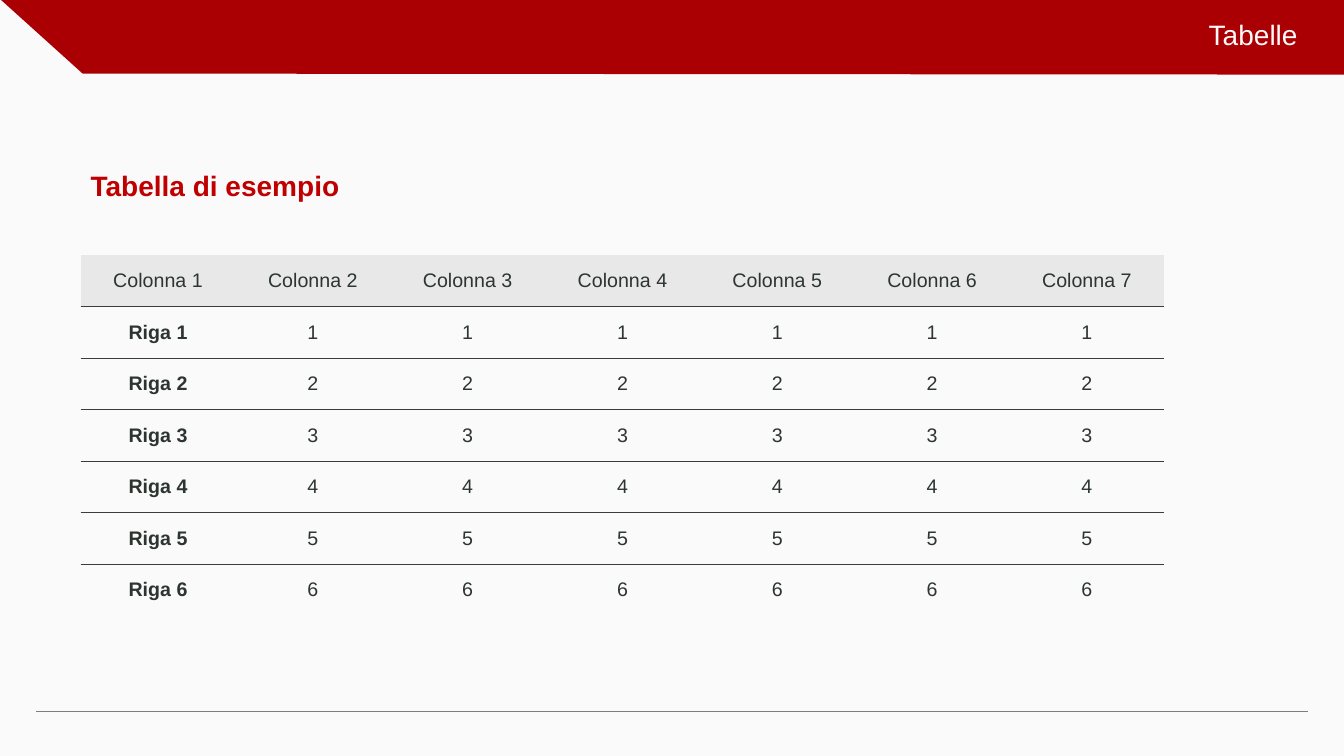
import pptx
import pptx.dml.color
import pptx.enum.shapes
import pptx.enum.text
import pptx.oxml
import pptx.oxml.ns
import pptx.oxml.xmlchemy
import pptx.util

Inches = pptx.util.Inches
RGBColor = pptx.dml.color.RGBColor
PP_ALIGN = pptx.enum.text.PP_ALIGN
MIDDLE = pptx.enum.text.MSO_ANCHOR.MIDDLE

PAPER = RGBColor(0xFA, 0xFA, 0xFA)
BANNER_RED = RGBColor(0xAA, 0x00, 0x04)
HEADING_RED = RGBColor(0xC0, 0x00, 0x00)
INK = RGBColor(0x2D, 0x35, 0x31)
HEADER_GREY = RGBColor(0xE8, 0xE8, 0xE8)
RULE_DARK = RGBColor(0x39, 0x3D, 0x3F)
FOOTER_GREY = RGBColor(0x7D, 0x7D, 0x7D)
PLAIN_TABLE_STYLE = "{2D5ABB26-0587-4C30-8999-92F81FD0307C}"


def format_text(text_frame, size, color, align, bold=False, spacing=None):
    """Format the only paragraph of a text frame."""
    paragraph = text_frame.paragraphs[0]
    paragraph.alignment = align
    paragraph.line_spacing = spacing
    font = paragraph.runs[0].font
    font.name = "Arial"
    font.size = pptx.util.Pt(size)
    font.bold = bold
    font.color.rgb = color


def add_banner(slide, left, top, width, height):
    """Draw the red band with its slanted left end and the slide title."""
    builder = slide.shapes.build_freeform(Inches(left), Inches(top))
    builder.add_line_segments([
        (Inches(left + width), Inches(top)),
        (Inches(left + width), Inches(top + height)),
        (Inches(left + 0.82), Inches(top + height - 0.01)),
    ])
    band = builder.convert_to_shape()
    band.shadow.inherit = False
    band.fill.solid()
    band.fill.fore_color.rgb = BANNER_RED
    band.line.fill.background()

    title = slide.shapes.title
    title.left, title.top = Inches(left + 5.12), Inches(top + 0.01)
    title.width, title.height = Inches(7.85), Inches(0.73)
    title.text_frame.text = "Tabelle"
    title.text_frame.vertical_anchor = MIDDLE
    format_text(title.text_frame, 20, PAPER, PP_ALIGN.RIGHT, spacing=0.9)
    band.element.addnext(title.element)


def add_footer_rule(slide, left, top, width):
    """Draw the thin line at the foot of the slide."""
    rule = slide.shapes.add_connector(
        pptx.enum.shapes.MSO_CONNECTOR.STRAIGHT,
        Inches(left), Inches(top), Inches(left + width), Inches(top))
    rule.line.color.rgb = FOOTER_GREY
    rule.line.width = pptx.util.Pt(0.75)
    rule.element.spPr.append(pptx.oxml.xmlchemy.OxmlElement("a:effectLst"))


def add_heading(slide, left, top, width, height):
    """Place the heading above the table."""
    heading = slide.shapes.add_textbox(
        Inches(left), Inches(top), Inches(width), Inches(height)).text_frame
    heading.word_wrap = True
    heading.text = "Tabella di esempio"
    format_text(heading, 20, HEADING_RED, PP_ALIGN.LEFT, bold=True, spacing=1.2)


def add_bottom_border(cell):
    """Give a table cell a thin dark lower edge."""
    border = pptx.oxml.parse_xml(
        f'<a:lnB {pptx.oxml.ns.nsdecls("a")} w="6350"><a:solidFill>'
        f'<a:srgbClr val="{RULE_DARK}"/></a:solidFill></a:lnB>')
    cell._tc.get_or_add_tcPr().insert(0, border)


def add_example_table(slide, left, top, width, height):
    """Build the numbered table with a grey header and ruled rows."""
    header = [f"Colonna {number}" for number in range(1, 8)]
    body = [[f"Riga {number}"] + [str(number)] * 6 for number in range(1, 7)]
    entries = [header] + body
    table = slide.shapes.add_table(
        len(entries), len(header),
        Inches(left), Inches(top), Inches(width), Inches(height)).table
    table.horz_banding = False
    table._tbl.tblPr.find(pptx.oxml.ns.qn("a:tableStyleId")).text = PLAIN_TABLE_STYLE
    for row, texts in enumerate(entries):
        for column, text in enumerate(texts):
            cell = table.cell(row, column)
            cell.text_frame.text = text
            cell.vertical_anchor = MIDDLE
            format_text(cell.text_frame, 14, INK, PP_ALIGN.CENTER,
                        bold=row > 0 and column == 0)
            if row == 0:
                cell.fill.solid()
                cell.fill.fore_color.rgb = HEADER_GREY
            else:
                cell.fill.background()
            if row < len(entries) - 1:
                add_bottom_border(cell)


def main():
    """Build and save the table slide."""
    presentation = pptx.Presentation()
    presentation.slide_width = Inches(13.33)
    presentation.slide_height = Inches(7.5)
    slide = presentation.slides.add_slide(presentation.slide_layouts[5])
    slide.background.fill.solid()
    slide.background.fill.fore_color.rgb = PAPER
    add_banner(slide, 0, -0.01, 13.38, 0.75)
    add_footer_rule(slide, 0.36, 7.06, 12.61)
    add_heading(slide, 0.8, 1.56, 11.73, 0.53)
    add_example_table(slide, 0.8, 2.53, 10.75, 3.58)
    presentation.save("out.pptx")


if __name__ == "__main__":
    main()
